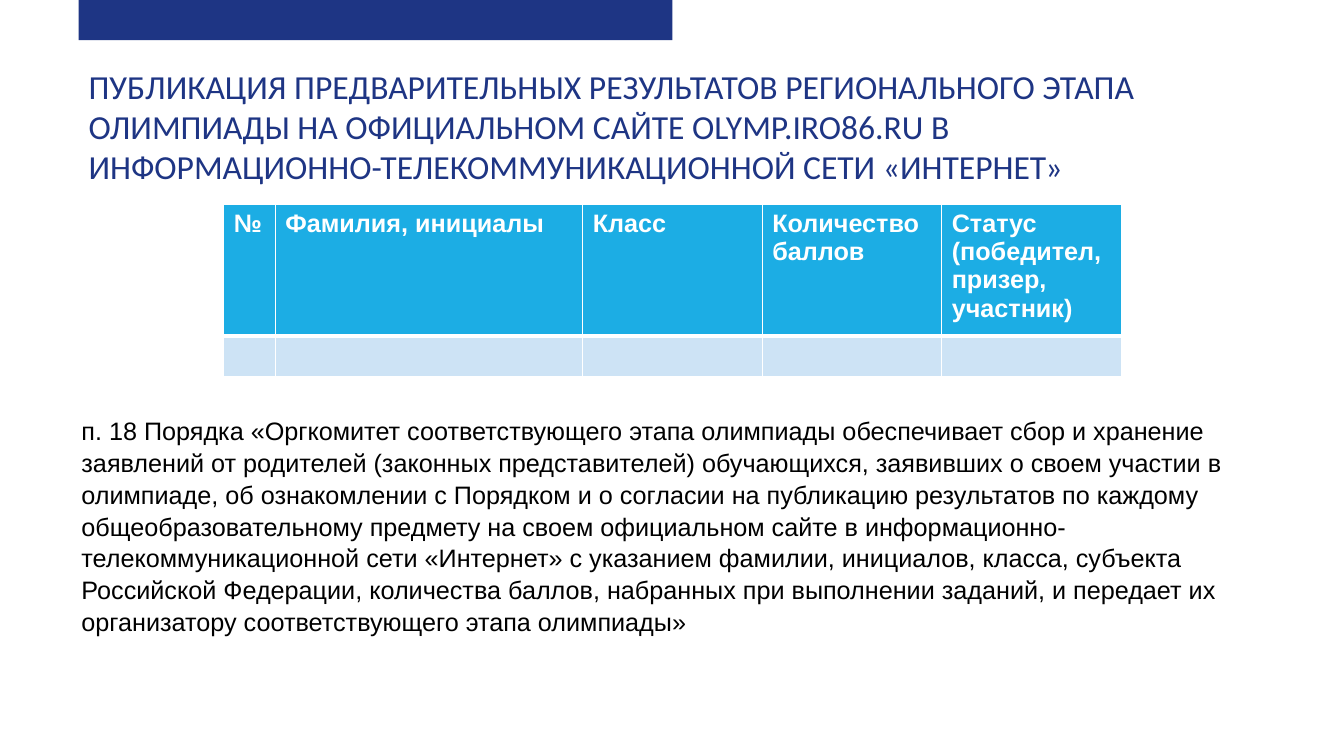
from lxml import etree
from pptx import Presentation
from pptx import util as u
from pptx.dml import color
from pptx.enum import shapes, text
from pptx.oxml import ns

COLORS = {"navy": "1E3584", "cyan": "1CADE4", "pale": "CDE3F5",
          "white": "FFFFFF", "black": "000000"}

TITLE = ("ПУБЛИКАЦИЯ ПРЕДВАРИТЕЛЬНЫХ РЕЗУЛЬТАТОВ РЕГИОНАЛЬНОГО ЭТАПА ОЛИМПИАДЫ "
         "НА ОФИЦИАЛЬНОМ САЙТЕ OLYMP.IRO86.RU В "
         "ИНФОРМАЦИОННО-ТЕЛЕКОММУНИКАЦИОННОЙ СЕТИ «ИНТЕРНЕТ»")
RULE = ("п. 18 Порядка «Оргкомитет соответствующего этапа олимпиады обеспечивает сбор "
        "и хранение заявлений от родителей (законных представителей) обучающихся, "
        "заявивших о своем участии в олимпиаде, об ознакомлении с Порядком и о согласии "
        "на публикацию результатов по каждому общеобразовательному предмету на своем "
        "официальном сайте в информационно-телекоммуникационной сети «Интернет» с "
        "указанием фамилии, инициалов, класса, субъекта Российской Федерации, количества "
        "баллов, набранных при выполнении заданий, и передает их организатору "
        "соответствующего этапа олимпиады»")
HEADERS = ["№", "Фамилия, инициалы", "Класс", "Количество баллов",
           "Статус (победител, призер, участник)"]
COLUMN_WIDTHS = [0.51, 3.05, 1.78, 1.78, 1.78]
ROW_HEIGHTS = [1.3, 0.41]

TITLE_FONT = {"name": "Calibri", "size": u.Pt(24)}
BODY_FONT = {"name": "Arial", "size": u.Pt(18)}
HEADER_FONT = {**BODY_FONT, "bold": True}


def rgb(name):
    """Return the named colour."""
    return color.RGBColor.from_string(COLORS[name])


def inches(values):
    """Convert numbers to lengths."""
    return [u.Inches(value) for value in values]


def write(para, words, font, tint):
    """Add one formatted span to a paragraph."""
    span = para.add_run()
    span.text = words
    for key, value in font.items():
        setattr(span.font, key, value)
    span.font.color.rgb = rgb(tint)


def add_bar(page, place, tint):
    """Draw a plain filled rectangle."""
    bar = page.shapes.add_shape(shapes.MSO_SHAPE.RECTANGLE, *inches(place))
    bar.shadow.inherit = False
    bar.fill.solid()
    bar.fill.fore_color.rgb = rgb(tint)
    bar.line.fill.background()


def add_text(page, place, words, font, tint, spacing=1.0):
    """Add a wrapped text box with one paragraph."""
    frame = page.shapes.add_textbox(*inches(place)).text_frame
    frame.word_wrap = True
    frame.auto_size = text.MSO_AUTO_SIZE.SHAPE_TO_FIT_TEXT
    para = frame.paragraphs[0]
    para.line_spacing = spacing
    write(para, words, font, tint)


def style_cell(cell, tint, widths):
    """Give a cell white borders and a solid fill."""
    properties = cell._tc.get_or_add_tcPr()
    for side, width in widths.items():
        line = etree.SubElement(properties, ns.qn(f"a:ln{side}"), w=str(int(u.Pt(width))))
        fill = etree.SubElement(line, ns.qn("a:solidFill"))
        etree.SubElement(fill, ns.qn("a:srgbClr"), val=COLORS["white"])
    cell.fill.solid()
    cell.fill.fore_color.rgb = rgb(tint)


def add_results_table(page, left, top):
    """Add the results table with its header and empty row."""
    size = inches([left, top, sum(COLUMN_WIDTHS), sum(ROW_HEIGHTS)])
    table = page.shapes.add_table(len(ROW_HEIGHTS), len(HEADERS), *size).table
    for row, height in zip(table.rows, ROW_HEIGHTS):
        row.height = u.Inches(height)
    for index, (words, width) in enumerate(zip(HEADERS, COLUMN_WIDTHS)):
        table.columns[index].width = u.Inches(width)
        header = table.cell(0, index)
        write(header.text_frame.paragraphs[0], words, HEADER_FONT, "white")
        style_cell(header, "cyan", {"L": 1, "R": 1, "T": 1, "B": 3})
        style_cell(table.cell(1, index), "pale", {"L": 1, "R": 1, "T": 3, "B": 1})


def main():
    """Build and save the slide."""
    deck = Presentation()
    deck.slide_width, deck.slide_height = inches([13.33, 7.5])
    page = deck.slides.add_slide(deck.slide_layouts[6])
    add_bar(page, [0.78, 0, 5.89, 0.4], "navy")
    add_text(page, [0.78, 0.6, 11.69, 1.31], TITLE, TITLE_FONT, "navy")
    add_text(page, [0.71, 4.06, 12.47, 2.22], RULE, BODY_FONT, "black", 1.05)
    add_results_table(page, 2.22, 2.03)
    deck.save("out.pptx")


if __name__ == "__main__":
    main()
